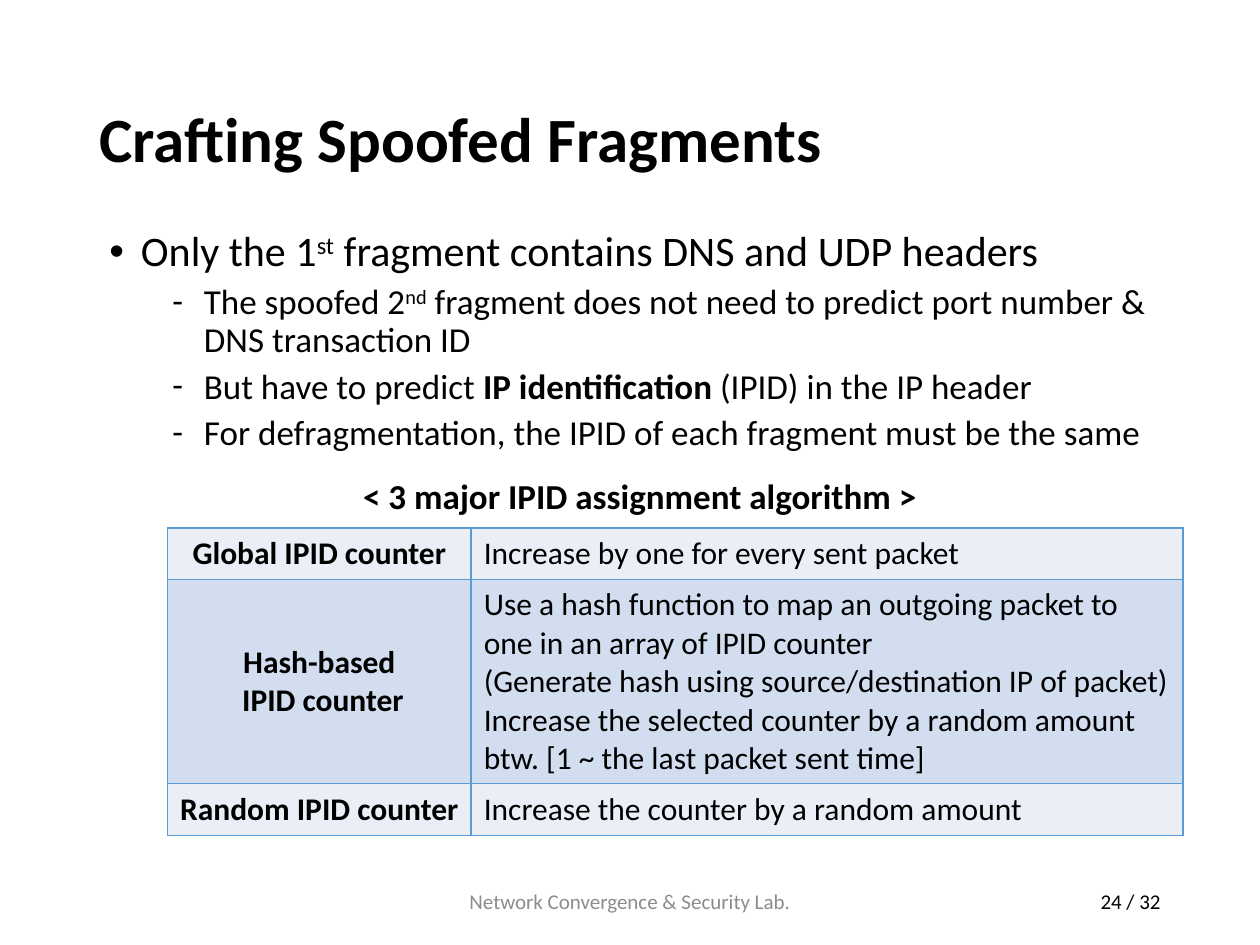
from lxml.etree import SubElement
from pptx import Presentation
from pptx.dml.color import RGBColor
from pptx.enum.text import MSO_ANCHOR, PP_ALIGN
from pptx.oxml.ns import qn
from pptx.util import Inches, Pt

BLACK = RGBColor(0, 0, 0)
GRAY = RGBColor(0x8C, 0x8C, 0x8C)
BLUE = RGBColor(0x5B, 0x9B, 0xD5)
PALE = RGBColor(0xEA, 0xEF, 0xF7)
LIGHT = RGBColor(0xD2, 0xDE, 0xEF)
LEFT, MID, RIGHT = PP_ALIGN.LEFT, PP_ALIGN.CENTER, PP_ALIGN.RIGHT

TITLE = "Crafting Spoofed Fragments"
POINTS = [
    (0, [("Only the 1", ""), ("st", "sup"),
         (" fragment contains DNS and UDP headers", "")]),
    (1, [("The spoofed 2", ""), ("nd", "sup"),
         (" fragment does not need to predict port number & DNS transaction ID", "")]),
    (1, [("But have to predict ", ""), ("IP identification ", "bold"),
         ("(IPID) in the IP header", "")]),
    (1, [("For defragmentation, the IPID of each fragment must be the same", "")]),
]
LEVELS = [
    dict(size=24, before=10, indent=0.25, mark="•"),
    dict(size=20, before=5, indent=0.75, mark="-"),
]
CAPTION = "< 3 major IPID assignment algorithm >"
ROWS = [
    (0.41, PALE, ["Global IPID counter"], ["Increase by one for every sent packet"]),
    (1.62, LIGHT, ["Hash-based", " IPID counter"], [
        "Use a hash function to map an outgoing packet to one in an array of IPID counter",
        "(Generate hash using source/destination IP of packet)",
        "Increase the selected counter by a random amount btw. [1 ~ the last packet sent time]",
    ]),
    (0.41, PALE, ["Random IPID counter"], ["Increase the counter by a random amount"]),
]
COLS = [2.41, 5.65]
FOOTER = "Network Convergence & Security Lab."
PAGE = "24 / 32"


def write(frame, text, size=18, color=BLACK, bold=False, align=LEFT,
          line=None, before=0, indent=0, mark=None, fresh=True):
    para = frame.paragraphs[0] if fresh else frame.add_paragraph()
    para.alignment = align
    para.space_before = Pt(before)
    if line:
        para.line_spacing = line
    if mark:
        props = para._p.get_or_add_pPr()
        props.set("marL", str(Inches(indent)))
        props.set("indent", str(Inches(-0.25)))
        SubElement(props, qn("a:buFont")).set("typeface", "Arial" if mark == "•" else "Calibri")
        SubElement(props, qn("a:buChar")).set("char", mark)
    for part, style in [(text, "")] if isinstance(text, str) else text:
        run = para.add_run()
        run.text = part
        font = run.font
        font.name, font.size = "Calibri", Pt(size)
        font.bold = bold or style == "bold"
        font.color.rgb = color
        if style == "sup":
            font._element.set("baseline", "30000")


def add_box(slide, left, top, width, height, anchor=MSO_ANCHOR.TOP):
    box = slide.shapes.add_textbox(*map(Inches, (left, top, width, height)))
    frame = box.text_frame
    frame.word_wrap = True
    frame.vertical_anchor = anchor
    return frame


def edge(cell):
    props = cell._tc.get_or_add_tcPr()
    for place, side in enumerate(("lnL", "lnR", "lnT", "lnB")):
        line = SubElement(props, qn("a:" + side), w=str(Pt(1)))
        fill = SubElement(line, qn("a:solidFill"))
        SubElement(fill, qn("a:srgbClr"), val=str(BLUE))
        props.insert(place, line)


def add_grid(slide):
    high = sum(row[0] for row in ROWS)
    shape = slide.shapes.add_table(
        len(ROWS), len(COLS), Inches(1.33), Inches(4.19), Inches(sum(COLS)), Inches(high))
    grid = shape.table
    grid.first_row = grid.horz_banding = False
    for col, width in zip(grid.columns, COLS):
        col.width = Inches(width)
    for row, (height, color, *texts) in zip(grid.rows, ROWS):
        row.height = Inches(height)
        for cell, lines, head in zip(row.cells, texts, (True, False)):
            cell.vertical_anchor = MSO_ANCHOR.MIDDLE
            cell.fill.solid()
            cell.fill.fore_color.rgb = color
            edge(cell)
            for rank, text in enumerate(lines):
                write(cell.text_frame, text, bold=head,
                      align=MID if head else LEFT, fresh=rank == 0)


def main():
    deck = Presentation()
    deck.slide_width, deck.slide_height = Inches(10), Inches(7.5)
    slide = deck.slides.add_slide(deck.slide_layouts[6])

    title = add_box(slide, 0.69, 0.4, 8.62, 1.45, MSO_ANCHOR.MIDDLE)
    write(title, TITLE, size=36, bold=True, line=0.9)

    body = add_box(slide, 0.77, 1.78, 8.62, 4.9)
    for rank, (level, text) in enumerate(POINTS):
        write(body, text, line=0.9, fresh=rank == 0, **LEVELS[level])

    add_grid(slide)
    write(add_box(slide, 2.48, 3.72, 5.2, 0.44), CAPTION, size=20, bold=True, align=MID)
    write(add_box(slide, 3.31, 6.95, 3.38, 0.4, MSO_ANCHOR.MIDDLE), FOOTER,
          size=12, color=GRAY, align=MID)
    write(add_box(slide, 7.06, 6.95, 2.25, 0.4, MSO_ANCHOR.MIDDLE), PAGE,
          size=12, align=RIGHT)
    deck.save("out.pptx")


if __name__ == "__main__":
    main()
